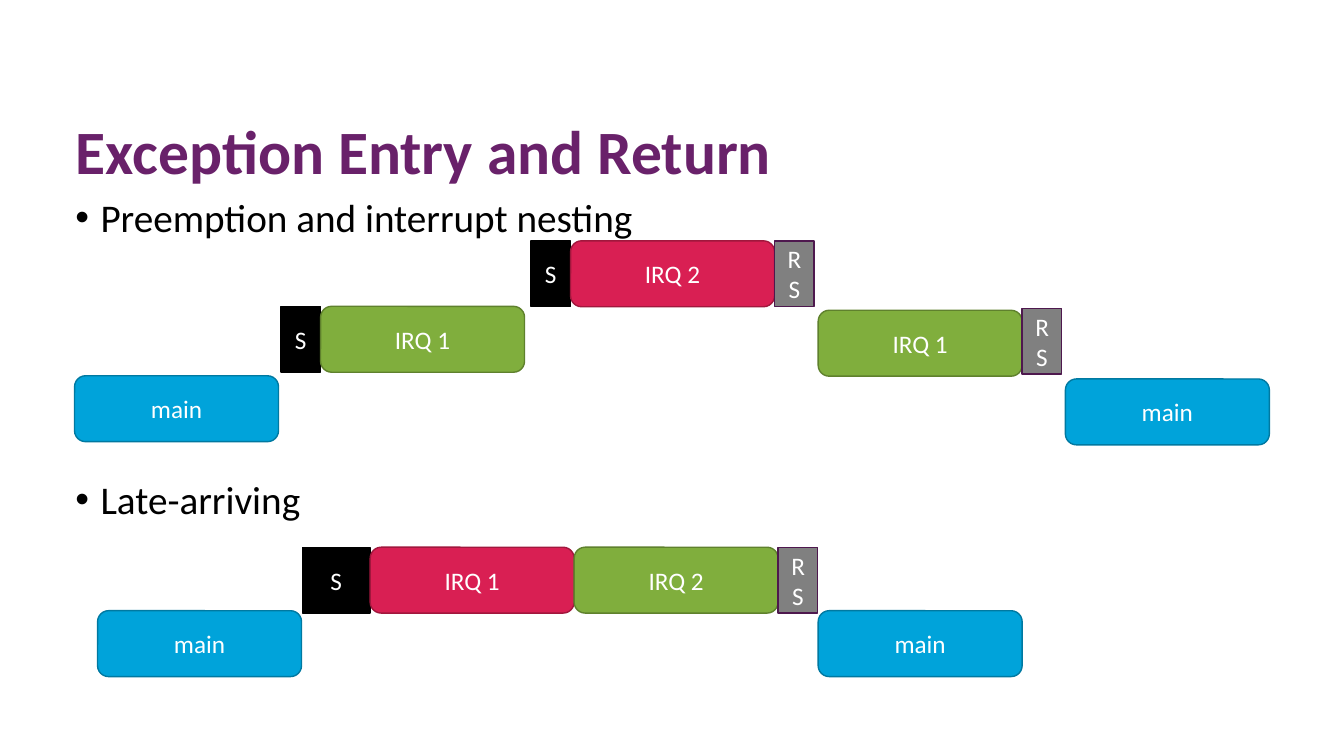
from pptx import Presentation
from pptx import util as u
from pptx.dml.color import RGBColor
from pptx.enum import shapes, text
from pptx.oxml import parse_xml
from pptx.oxml.ns import nsdecls

PURPLE = RGBColor(0x69, 0x21, 0x6A)
DARK_PURPLE = RGBColor(0x4E, 0x18, 0x4E)
BLUE = RGBColor(0x00, 0xA3, 0xDA)
DARK_BLUE = RGBColor(0x00, 0x79, 0xA1)
RED = RGBColor(0xD9, 0x1F, 0x53)
DARK_RED = RGBColor(0xA1, 0x17, 0x3D)
GREEN = RGBColor(0x80, 0xAE, 0x3D)
DARK_GREEN = RGBColor(0x5F, 0x81, 0x2D)
GREY = RGBColor(0x80, 0x80, 0x80)
BLACK = RGBColor(0, 0, 0)
WHITE = RGBColor(0xFF, 0xFF, 0xFF)

TITLE = "Exception Entry and Return"
# Bullet text and the space before it in points
BULLETS = [("Preemption and interrupt nesting", 0), ("Late-arriving", 171)]

ROUND = shapes.MSO_SHAPE.ROUNDED_RECTANGLE
RECT = shapes.MSO_SHAPE.RECTANGLE
TASK_WIDTH, STACK_WIDTH, LATE_STACK_WIDTH, HEIGHT = 5.14, 1.0, 1.71, 1.66

# Style: outline shape, width in cm, fill, line
MAIN = (ROUND, TASK_WIDTH, BLUE, DARK_BLUE)
URGENT = (ROUND, TASK_WIDTH, RED, DARK_RED)
NORMAL = (ROUND, TASK_WIDTH, GREEN, DARK_GREEN)
SAVE = (RECT, STACK_WIDTH, BLACK, BLACK)
LATE_SAVE = (RECT, LATE_STACK_WIDTH, BLACK, BLACK)
RESTORE = (RECT, STACK_WIDTH, GREY, DARK_PURPLE)

# Each timeline is a list of chains: left, top, then blocks that touch
NESTING = [
    (1.88, 9.47, [("main", MAIN)]),
    (7.08, 7.72, [("S", SAVE), ("IRQ 1", NORMAL)]),
    (13.38, 6.07, [("S", SAVE), ("IRQ 2", URGENT), ("RS", RESTORE)]),
    (20.62, 7.82, [("IRQ 1", NORMAL)]),
    (25.76, 7.77, [("RS", RESTORE)]),
    (26.85, 9.55, [("main", MAIN)]),
]
LATE_ARRIVING = [
    (2.46, 15.39, [("main", MAIN)]),
    (7.62, 13.79, [("S", LATE_SAVE), ("IRQ 1", URGENT),
                   ("IRQ 2", NORMAL), ("RS", RESTORE)]),
    (20.62, 15.39, [("main", MAIN)]),
]


def write(para, words, size, color, bold=False, align=None, spacing=None, before=0):
    para.text = words
    para.alignment = align
    para.line_spacing = spacing
    para.space_before = u.Pt(before)
    para.font.name = "Calibri"
    para.font.size = u.Pt(size)
    para.font.bold = bold
    para.font.color.rgb = color


def add_bullet(para):
    props = para._p.get_or_add_pPr()
    props.set("marL", str(u.Cm(0.635)))
    props.set("indent", str(-u.Cm(0.635)))
    props.append(parse_xml(f'<a:buFont {nsdecls("a")} typeface="Arial"/>'))
    props.append(parse_xml(f'<a:buChar {nsdecls("a")} char="•"/>'))


def add_block(group, left, top, label, style):
    outline, width, fill, line = style
    block = group.shapes.add_shape(outline, u.Cm(left), u.Cm(top), u.Cm(width), u.Cm(HEIGHT))
    block.shadow.inherit = False
    block.fill.solid()
    block.fill.fore_color.rgb = fill
    block.line.color.rgb = line
    block.line.width = u.Pt(1)
    frame = block.text_frame
    frame.word_wrap = True
    frame.vertical_anchor = text.MSO_ANCHOR.MIDDLE
    write(frame.paragraphs[0], label, 18, WHITE, align=text.PP_ALIGN.CENTER)


def add_timeline(slide, chains):
    group = slide.shapes.add_group_shape()
    for left, top, blocks in chains:
        for label, style in blocks:
            add_block(group, left, top, label, style)
            left += style[1]


def main():
    deck = Presentation()
    deck.slide_width, deck.slide_height = u.Cm(33.87), u.Cm(19.05)
    slide = deck.slides.add_slide(deck.slide_layouts[5])

    title = slide.shapes.title
    title.left, title.top = u.Cm(1.65), u.Cm(2.84)
    title.width, title.height = u.Cm(29.21), u.Cm(2.11)
    title.text_frame.vertical_anchor = text.MSO_ANCHOR.MIDDLE
    write(title.text_frame.paragraphs[0], TITLE, 44, PURPLE, bold=True,
          align=text.PP_ALIGN.LEFT, spacing=0.9)

    box = slide.shapes.add_textbox(u.Cm(1.65), u.Cm(4.88), u.Cm(29.21), u.Cm(11.28))
    frame = box.text_frame
    frame.word_wrap = True
    for index, (words, before) in enumerate(BULLETS):
        para = frame.add_paragraph() if index else frame.paragraphs[0]
        add_bullet(para)
        write(para, words, 28, BLACK, spacing=0.9, before=before)

    for chains in (NESTING, LATE_ARRIVING):
        add_timeline(slide, chains)
    deck.save("out.pptx")


if __name__ == "__main__":
    main()
